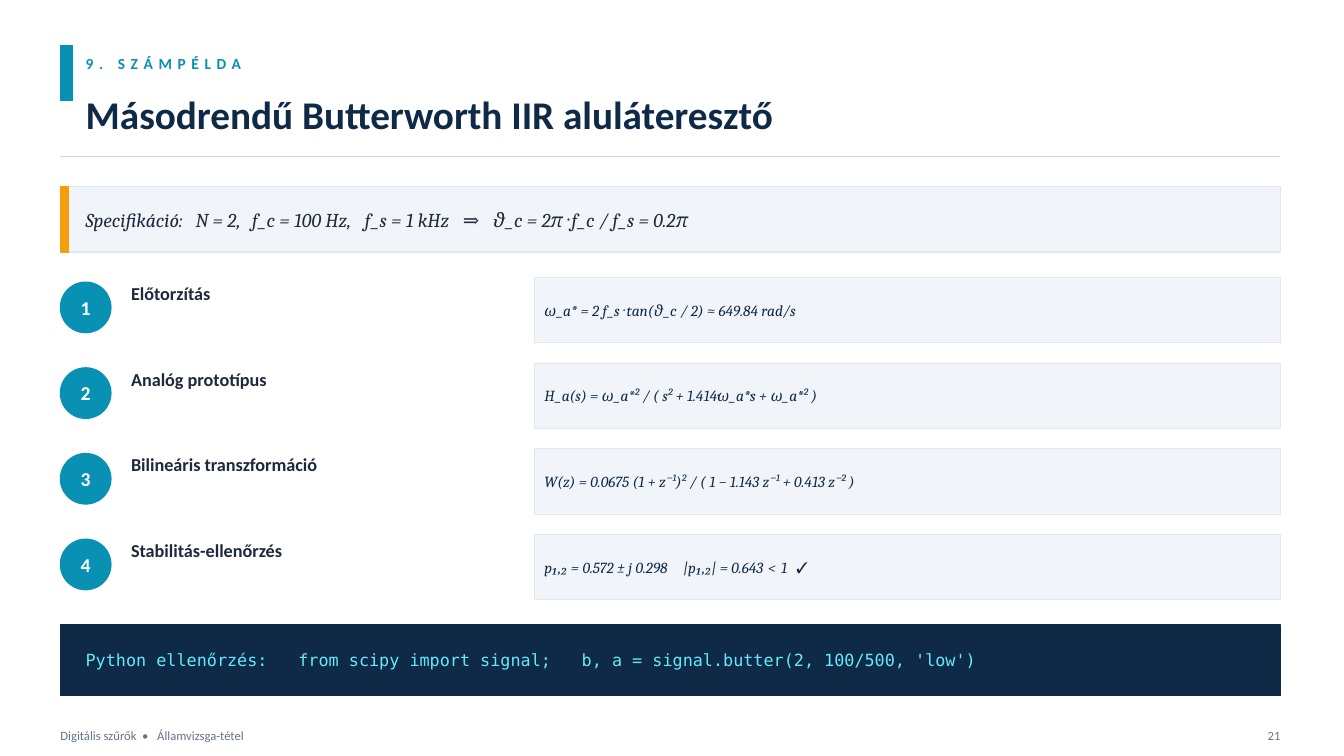
from lxml.etree import SubElement
from pptx import Presentation
from pptx.dml.color import RGBColor
from pptx.enum.shapes import MSO_CONNECTOR, MSO_SHAPE
from pptx.enum.text import MSO_ANCHOR, MSO_AUTO_SIZE, PP_ALIGN
from pptx.oxml.ns import qn
from pptx.util import Inches, Pt

SECTION = "9. SZÁMPÉLDA"
TITLE = "Másodrendű Butterworth IIR aluláteresztő"
SPECIFICATION = "Specifikáció:\tN = 2,\tf_c = 100 Hz,\tf_s = 1 kHz\t⇒\tϑ_c = 2π · f_c / f_s = 0.2π"
SPECIFICATION_TABS = (1.09, 1.65, 2.77, 3.74, 4.04)
STEPS = [
    ("Előtorzítás", "ω_a* = 2 f_s · tan(ϑ_c / 2) ≈ 649.84 rad/s", ()),
    ("Analóg prototípus", "H_a(s) = ω_a*² / ( s² + 1.414·ω_a*·s + ω_a*² )", ()),
    ("Bilineáris transzformáció", "W(z) = 0.0675 (1 + z⁻¹)² / ( 1 − 1.143 z⁻¹ + 0.413 z⁻² )", ()),
    ("Stabilitás-ellenőrzés", "p₁,₂ = 0.572 ± j 0.298\t|p₁,₂| = 0.643\t<\t1\t✓", (1.38, 2.22, 2.35, 2.5)),
]
CODE = "Python ellenőrzés:\tfrom scipy import signal;\tb, a = signal.butter(2, 100/500, 'low')"
CODE_TABS = (2.11, 4.92)
FOOTER = "Digitális szűrők\t•\tÁllamvizsga-tétel"
FOOTER_TABS = (0.81, 0.96)
PAGE = "21"

TEAL = RGBColor(0x08, 0x91, 0xB2)
NAVY = RGBColor(0x0F, 0x2A, 0x47)
INK = RGBColor(0x1E, 0x29, 0x3B)
PANEL = RGBColor(0xF1, 0xF5, 0xF9)
PANEL_LINE = RGBColor(0xE2, 0xE8, 0xF0)
RULE = RGBColor(0xCB, 0xD5, 0xE1)
AMBER = RGBColor(0xF5, 0x9E, 0x0B)
CYAN = RGBColor(0x67, 0xE8, 0xF9)
GRAY = RGBColor(0x64, 0x74, 0x8B)
WHITE = RGBColor(0xFF, 0xFF, 0xFF)

LEFT, RIGHT = 0.6, 12.7
WIDTH = RIGHT - LEFT
TEXT_INSET = 0.25
TEXT_LEFT = LEFT + TEXT_INSET
STEP_TOP, STEP_PITCH, PANEL_HEIGHT = 2.75, 0.85, 0.65
FORMULA_LEFT = 5.3


def write_text(shape, text, size, color, font="Calibri", bold=False, italic=False,
               align=PP_ALIGN.LEFT, inset=0, tabs=(), spacing=0):
    """Put one formatted, vertically centred paragraph into a shape."""
    frame = shape.text_frame
    frame.word_wrap = True
    frame.auto_size = MSO_AUTO_SIZE.NONE
    frame.vertical_anchor = MSO_ANCHOR.MIDDLE
    frame.margin_left = Inches(inset)
    frame.margin_top = frame.margin_right = frame.margin_bottom = 0
    paragraph = frame.paragraphs[0]
    paragraph.alignment = align
    if tabs:
        tab_list = SubElement(paragraph._p.get_or_add_pPr(), qn("a:tabLst"))
        for position in tabs:
            SubElement(tab_list, qn("a:tab"), pos=str(Inches(position)), algn="l")
    run = paragraph.add_run()
    run.text = text
    run.font.name = font
    run.font.size = Pt(size)
    run.font.bold = bold
    run.font.italic = italic
    run.font.color.rgb = color
    if spacing:
        run.font._element.set("spc", str(spacing * 100))


def add_block(slide, box, fill, line=None, line_width=1, kind=MSO_SHAPE.RECTANGLE):
    """Add a filled preset shape."""
    shape = slide.shapes.add_shape(kind, *map(Inches, box))
    shape.shadow.inherit = False
    shape.fill.solid()
    shape.fill.fore_color.rgb = fill
    shape.line.color.rgb = line or fill
    shape.line.width = Pt(line_width)
    return shape


def add_label(slide, box, text, **text_format):
    """Add a text box holding one formatted paragraph."""
    write_text(slide.shapes.add_textbox(*map(Inches, box)), text, **text_format)


def add_header(slide):
    """Add the accent, section label, title and rule."""
    add_block(slide, (LEFT, 0.45, 0.12, 0.55), TEAL)
    add_label(slide, (TEXT_LEFT, 0.45, 8, 0.35), SECTION, size=11, color=TEAL, bold=True, spacing=4)
    title = slide.shapes.title
    title.left, title.top, title.width, title.height = map(Inches, (TEXT_LEFT, 0.78, 12, 0.7))
    write_text(title, TITLE, size=28, color=NAVY, bold=True)
    rule = slide.shapes.add_connector(
        MSO_CONNECTOR.STRAIGHT, *map(Inches, (LEFT, 1.55, RIGHT, 1.55)))
    rule.line.color.rgb = RULE
    rule.line.width = Pt(0.75)
    SubElement(rule._element.spPr, qn("a:effectLst"))


def add_step(slide, index, name, formula, tabs):
    """Add one numbered step with its formula panel."""
    top = STEP_TOP + index * STEP_PITCH
    badge = add_block(slide, (LEFT, top + 0.05, 0.5, 0.5), TEAL, kind=MSO_SHAPE.OVAL)
    write_text(badge, str(index + 1), size=14, color=WHITE, bold=True, align=PP_ALIGN.CENTER)
    add_label(slide, (1.3, top, 4, 0.32), name, size=13, color=INK, bold=True)
    panel = add_block(slide, (FORMULA_LEFT, top, RIGHT - FORMULA_LEFT, PANEL_HEIGHT),
                      PANEL, PANEL_LINE, 0.5)
    write_text(panel, formula, size=11, color=NAVY, font="Cambria", italic=True,
               inset=0.1, tabs=tabs)


def main():
    """Build and save the slide."""
    presentation = Presentation()
    presentation.slide_width = Inches(13.33)
    presentation.slide_height = Inches(7.5)
    slide = presentation.slides.add_slide(presentation.slide_layouts[5])

    add_header(slide)
    specification = add_block(slide, (LEFT, 1.85, WIDTH, PANEL_HEIGHT), PANEL, PANEL_LINE)
    write_text(specification, SPECIFICATION, size=14, color=INK, font="Cambria", italic=True,
               inset=TEXT_INSET, tabs=SPECIFICATION_TABS)
    add_block(slide, (LEFT, 1.85, 0.08, PANEL_HEIGHT), AMBER)
    for index, step in enumerate(STEPS):
        add_step(slide, index, *step)
    code = add_block(slide, (LEFT, 6.2, WIDTH, 0.7), NAVY)
    write_text(code, CODE, size=12, color=CYAN, font="DejaVu Sans Mono",
               inset=TEXT_INSET, tabs=CODE_TABS)
    add_label(slide, (LEFT, 7.15, 8, 0.3), FOOTER, size=9, color=GRAY, tabs=FOOTER_TABS)
    add_label(slide, (RIGHT - 0.3, 7.15, 0.3, 0.3), PAGE, size=9, color=GRAY,
              align=PP_ALIGN.RIGHT)
    presentation.save("out.pptx")


if __name__ == "__main__":
    main()
